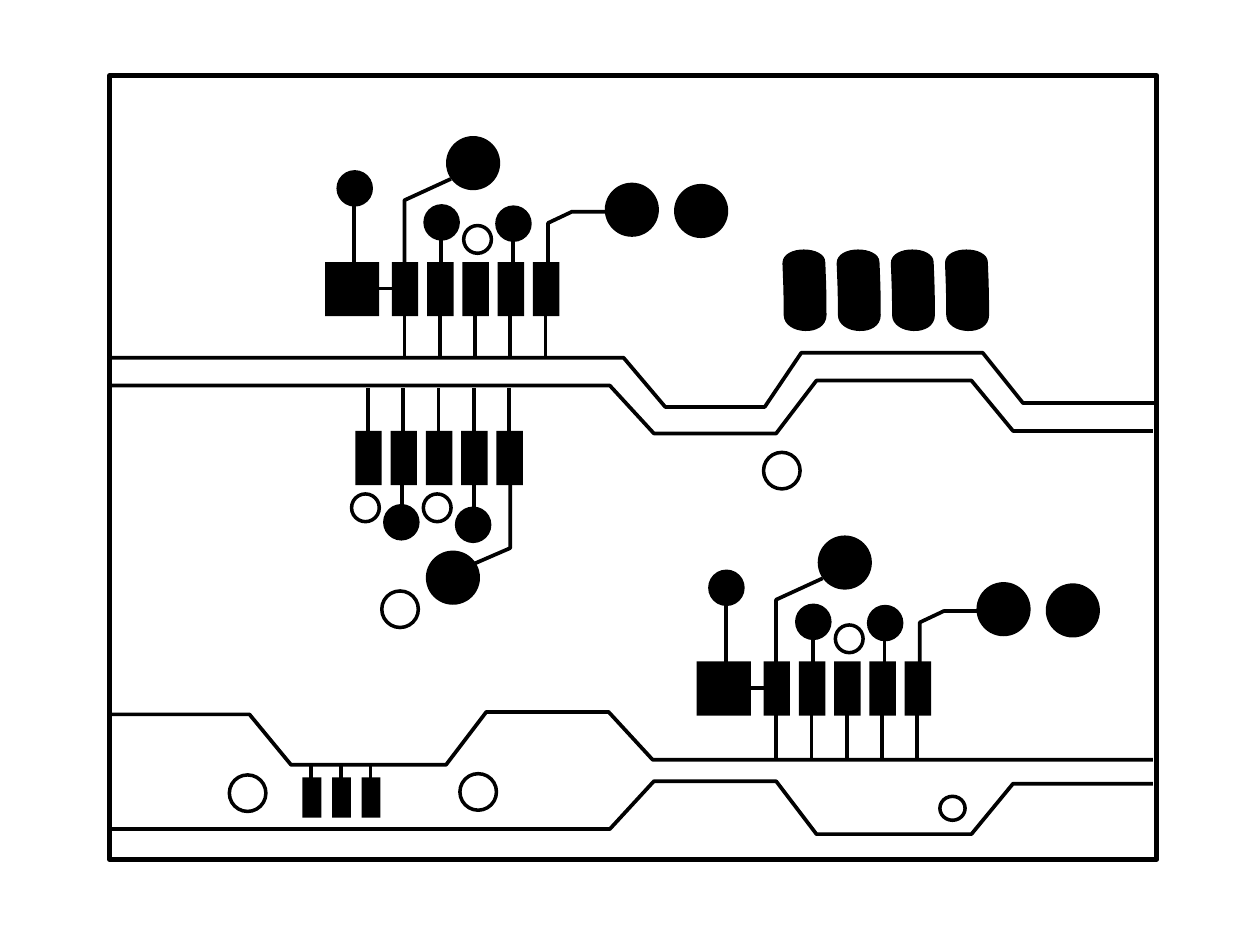
from lxml.etree import SubElement
from pptx import Presentation
from pptx.dml.color import RGBColor
from pptx.enum.shapes import MSO_CONNECTOR, MSO_SHAPE
from pptx.oxml.ns import qn
from pptx.util import Inches, Pt

BLACK = "000000"
TRACE = "010101"
WHITE = "FFFFFF"

presentation = Presentation()
presentation.slide_width = Inches(10)
presentation.slide_height = Inches(7.5)
slide = presentation.slides.add_slide(presentation.slide_layouts[6])


def add_pad(kind, left, top, width, height, outline=0):
    """Add a solid black pad, or a white one with a black outline in points."""
    shape = slide.shapes.add_shape(
        kind, Inches(left), Inches(top), Inches(width), Inches(height))
    shape.shadow.inherit = False
    shape.fill.solid()
    shape.fill.fore_color.rgb = RGBColor.from_string(WHITE if outline else BLACK)
    if outline:
        shape.line.color.rgb = RGBColor.from_string(BLACK)
        shape.line.width = Pt(outline)
    else:
        shape.line.fill.background()


def add_trace(*points):
    """Add a straight trace for two points, a bent one for more."""
    corners = [(Inches(x), Inches(y)) for x, y in points]
    if len(corners) == 2:
        shape = slide.shapes.add_connector(
            MSO_CONNECTOR.STRAIGHT, *corners[0], *corners[1])
        SubElement(shape.element.spPr, qn("a:effectLst"))
    else:
        builder = slide.shapes.build_freeform(*corners[0])
        builder.add_line_segments(corners[1:], close=False)
        shape = builder.convert_to_shape()
        shape.shadow.inherit = False
        shape.fill.background()
    shape.line.color.rgb = RGBColor.from_string(TRACE)
    shape.line.width = Pt(2.13)


# Board outline
add_pad(MSO_SHAPE.RECTANGLE, 0.87, 0.6, 8.31, 6.22, outline=3)

# Long bus traces across the board
add_trace((0.85, 2.84), (4.95, 2.84), (5.28, 3.23), (6.07, 3.23),
          (6.36, 2.8), (7.8, 2.8), (8.12, 3.2), (9.18, 3.2))
add_trace((0.87, 3.06), (4.84, 3.06), (5.19, 3.44), (6.16, 3.44),
          (6.48, 3.02), (7.71, 3.02), (8.04, 3.42), (9.15, 3.42))
add_trace((0.87, 5.67), (1.98, 5.67), (2.31, 6.07), (3.54, 6.07),
          (3.86, 5.65), (4.83, 5.65), (5.18, 6.03), (9.15, 6.03))
add_trace((0.87, 6.58), (4.84, 6.58), (5.19, 6.2), (6.16, 6.2),
          (6.48, 6.62), (7.71, 6.62), (8.04, 6.22), (9.15, 6.22))

# Mounting holes
for left, top in [(3.03, 4.69), (6.06, 3.59), (3.65, 6.14), (1.82, 6.15)]:
    add_pad(MSO_SHAPE.OVAL, left, top, 0.29, 0.29, outline=2)
add_pad(MSO_SHAPE.OVAL, 7.46, 6.32, 0.2, 0.19, outline=2)

# Row of four capsule contacts: Bezier sides and ends sampled as short segments
capsule_curves = [
    [(0.34, 0.13), (0.35, 0.35), (0.35, 0.45), (0.35, 0.55)],
    [(0.35, 0.55), (0.35, 0.73), (0.01, 0.71), (0.01, 0.55)],
    [(0.01, 0.55), (0.01, 0.48), (0.01, 0.36), (0, 0.14)],
    [(0, 0.14), (0, -0.01), (0.34, 0), (0.34, 0.13)],
]
capsule_points = []
for curve in capsule_curves:
    for step in range(16):
        t = step / 16
        weights = [(1 - t) ** 3, 3 * t * (1 - t) ** 2, 3 * t ** 2 * (1 - t), t ** 3]
        capsule_points.append([
            sum(weight * point[axis] for weight, point in zip(weights, curve))
            for axis in (0, 1)])
for column in range(4):
    left = 6.21 + 0.43 * column
    corners = [(Inches(left + x), Inches(1.95 + y)) for x, y in capsule_points]
    builder = slide.shapes.build_freeform(*corners[0])
    builder.add_line_segments(corners[1:], close=True)
    capsule = builder.convert_to_shape()
    capsule.shadow.inherit = False
    capsule.fill.solid()
    capsule.fill.fore_color.rgb = RGBColor.from_string(BLACK)
    capsule.line.fill.background()

# Two identical modules, placed by the corner of their square pad
for left, top in [(2.58, 2.08), (5.53, 5.25)]:
    add_trace((left + 0.23, top + 0.05), (left + 0.23, top - 0.62))
    add_trace((left + 0.21, top + 0.21), (left + 0.64, top + 0.21))
    add_trace((left + 0.63, top + 0.17), (left + 0.63, top - 0.49),
              (left + 1, top - 0.66))
    add_trace((left + 1.77, top + 0.35), (left + 1.77, top - 0.31),
              (left + 1.96, top - 0.4), (left + 2.48, top - 0.4))
    for x in (0.92, 1.49):
        add_trace((left + x, top + 0.12), (left + x, top - 0.31))
    add_pad(MSO_SHAPE.RECTANGLE, left, top, 0.43, 0.43)
    for column in range(5):
        pad_left = left + 0.53 + 0.28 * column
        add_trace((pad_left + 0.1, top + 0.39), (pad_left + 0.1, top + 0.77))
        add_pad(MSO_SHAPE.RECTANGLE, pad_left, top, 0.21, 0.43)
    for x, y in [(0.96, -1), (2.22, -0.63), (2.77, -0.62)]:
        add_pad(MSO_SHAPE.OVAL, left + x, top + y, 0.43, 0.43)
    for x, y in [(0.09, -0.73), (0.78, -0.46), (1.35, -0.45)]:
        add_pad(MSO_SHAPE.OVAL, left + x, top + y, 0.29, 0.29)
    add_pad(MSO_SHAPE.OVAL, left + 1.1, top - 0.29, 0.22, 0.22, outline=2)

# Module hanging below the upper bus
add_trace((4.05, 3.69), (4.05, 4.35), (3.68, 4.51))
for x in (3.19, 3.76):
    add_trace((x, 3.72), (x, 4.15))
for column in range(5):
    pad_left = 2.82 + 0.28 * column
    add_trace((pad_left + 0.1, 3.08), (pad_left + 0.1, 3.47))
    add_pad(MSO_SHAPE.RECTANGLE, pad_left, 3.42, 0.21, 0.43)
add_pad(MSO_SHAPE.OVAL, 3.38, 4.37, 0.43, 0.43)
for left, top in [(3.04, 4), (3.61, 4.02)]:
    add_pad(MSO_SHAPE.OVAL, left, top, 0.29, 0.29)
for left in (2.79, 3.36):
    add_pad(MSO_SHAPE.OVAL, left, 3.92, 0.22, 0.22, outline=2)

# Three small pads under the lower bus
for column in range(3):
    left = 2.4 + 0.235 * column
    add_trace((left + 0.07, 6.08), (left + 0.07, 6.21))
    add_pad(MSO_SHAPE.RECTANGLE, left, 6.17, 0.15, 0.32)

presentation.save("out.pptx")
